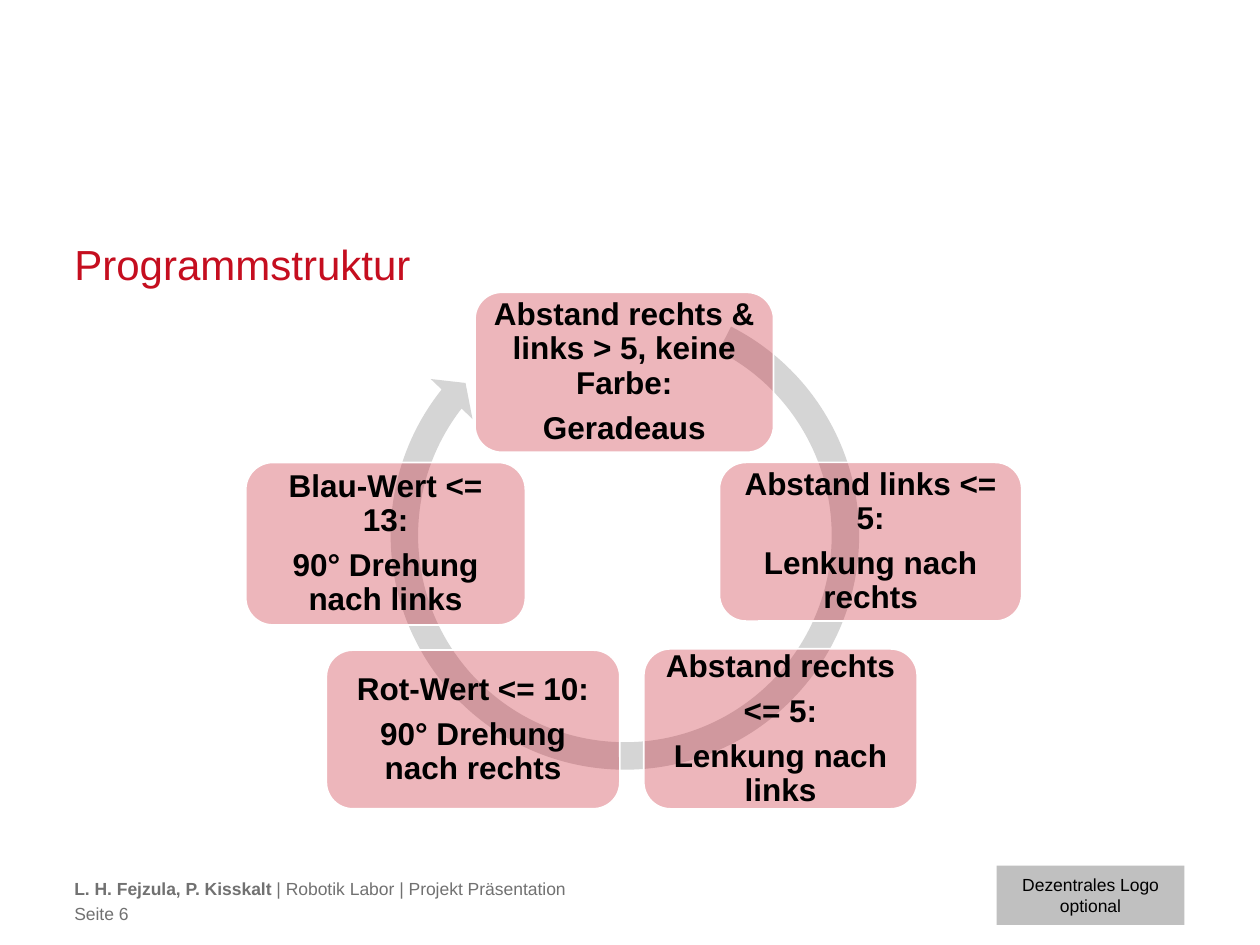
from lxml.etree import SubElement
from pptx import Presentation
from pptx.dml.color import RGBColor
from pptx.enum.shapes import MSO_SHAPE
from pptx.enum.text import MSO_ANCHOR, MSO_AUTO_SIZE, PP_ALIGN
from pptx.oxml.ns import qn
from pptx.util import Inches, Pt

COLUMNS, ROWS = 100, 75
LEFT, TEXT_WIDTH = 5.9, 72.4
RED, GREY, BLACK, WHITE = "C50E1F", "717171", "000000", "FFFFFF"

STEPS = [
    ((37.7, 23.2, 23.7, 12.7), ["Abstand rechts & links > 5, keine Farbe:", "Geradeaus"]),
    ((57.1, 36.7, 24, 12.6), ["Abstand links <= 5:", "Lenkung nach rechts"]),
    ((51.1, 51.5, 21.7, 12.7), ["Abstand rechts", "<= 5:", "Lenkung nach links"]),
    ((25.9, 51.6, 23.3, 12.6), ["Rot-Wert <= 10:", "90° Drehung nach rechts"]),
    ((19.5, 36.7, 22.2, 12.9), ["Blau-Wert <= 13:", "90° Drehung nach links"]),
]


def colour(value):
    return RGBColor.from_string(value)


class SlideBuilder:
    """Holds the style and the slide; places are (left, top, width, height) in grid cells."""

    font = "Arial"

    def __init__(self, deck):
        self.column = deck.slide_width / COLUMNS
        self.row = deck.slide_height / ROWS
        self.page = deck.slides.add_slide(deck.slide_layouts[5])

    def place(self, left, top, width, height):
        return (round(left * self.column), round(top * self.row),
                round(width * self.column), round(height * self.row))

    def style(self, font, size, tone, bold=False):
        font.name, font.size, font.bold = self.font, Pt(size), bold
        font.color.rgb = colour(tone)

    def set_frame(self, frame, inset, anchor, wrap=True):
        frame.word_wrap = wrap
        frame.vertical_anchor = anchor
        frame.margin_left = frame.margin_right = Inches(inset)
        frame.margin_top = frame.margin_bottom = Inches(inset)

    def fill_text(self, frame, lines, size, tone, bold=False, align=PP_ALIGN.LEFT):
        frame.text = "\n".join(lines)
        for para in frame.paragraphs:
            para.alignment = align
            self.style(para.font, size, tone, bold)

    def title(self, text, place):
        box = self.page.shapes.title
        box.left, box.top, box.width, box.height = self.place(*place)
        frame = box.text_frame
        self.set_frame(frame, 0, MSO_ANCHOR.BOTTOM)
        frame.auto_size = MSO_AUTO_SIZE.SHAPE_TO_FIT_TEXT
        self.fill_text(frame, [text], 24, RED)
        frame.paragraphs[0].line_spacing = Pt(30)

    def shape(self, kind, place, fill):
        shape = self.page.shapes.add_shape(kind, *self.place(*place))
        shape.shadow.inherit = False
        shape.fill.solid()
        shape.fill.fore_color.rgb = colour(fill)
        shape.line.fill.background()
        return shape

    def cycle_arrow(self, place, adjustments):
        arrow = self.shape(MSO_SHAPE.CIRCULAR_ARROW, place, "D5D5D5")
        for index, value in enumerate(adjustments):
            arrow.adjustments[index] = value

    def step(self, place, lines):
        box = self.shape(MSO_SHAPE.ROUNDED_RECTANGLE, place, RED)
        tone = box.element.spPr.find(qn("a:solidFill"))[0]
        SubElement(tone, qn("a:alpha"), val="30000")
        box.line.color.rgb = colour(WHITE)
        box.line.width = Pt(1)
        self.set_frame(box.text_frame, 0.07, MSO_ANCHOR.MIDDLE)
        self.fill_text(box.text_frame, lines, 18, BLACK, True, PP_ALIGN.CENTER)
        for para in box.text_frame.paragraphs:
            para.line_spacing = 0.9
            para.space_after = Pt(6.3)

    def label(self, place, lines):
        box = self.shape(MSO_SHAPE.RECTANGLE, place, "C0C0C0")
        self.set_frame(box.text_frame, 0.05, MSO_ANCHOR.MIDDLE, wrap=False)
        self.fill_text(box.text_frame, lines, 10, BLACK, align=PP_ALIGN.CENTER)

    def footer(self, top, text, bold_text=""):
        place = self.place(LEFT, top, TEXT_WIDTH, 1.7)
        frame = self.page.shapes.add_textbox(*place).text_frame
        self.set_frame(frame, 0, MSO_ANCHOR.TOP)
        para = frame.paragraphs[0]
        self.style(para.font, 10, GREY)
        for part, bold in ((bold_text, True), (text, False)):
            if part:
                span = para.add_run()
                span.text = part
                self.style(span.font, 10, GREY, bold)


def main():
    deck = Presentation()
    deck.slide_width, deck.slide_height = Inches(10), Inches(7.5)
    slide = SlideBuilder(deck)
    slide.label((79.1, 68.7, 14.9, 4.7), ["Dezentrales Logo", "optional"])
    slide.title("Programmstruktur", (LEFT, 19, 88.2, 3.9))
    slide.cycle_arrow((29.8, 22.7, 39.6, 39.6), [0.055, 3.31, 130.93, 178.17, 0.058])
    for place, lines in STEPS:
        slide.step(place, lines)
    slide.footer(69.7, "| Robotik Labor | Projekt Präsentation", "L. H. Fejzula, P. Kisskalt ")
    slide.footer(71.7, "Seite 6")
    deck.save("out.pptx")


if __name__ == "__main__":
    main()
